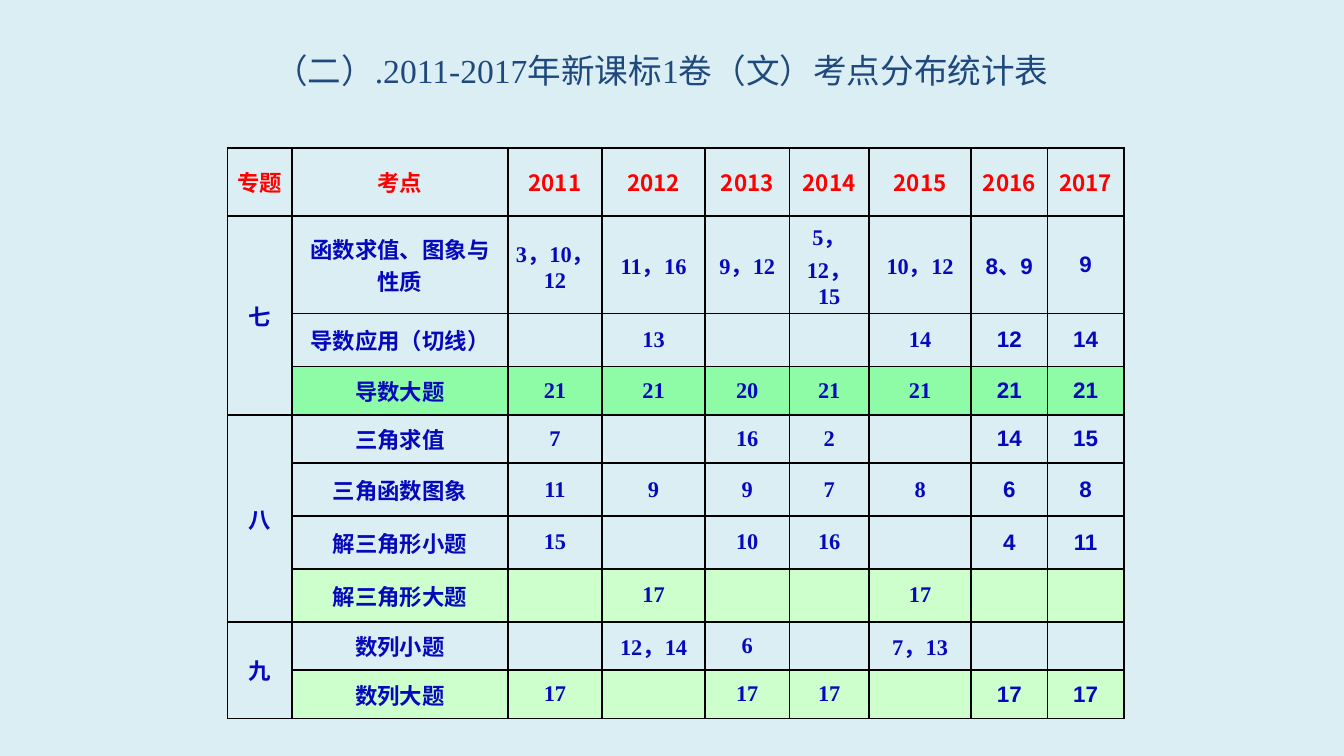
import itertools
from dataclasses import dataclass

import pptx
import pptx.dml.color
import pptx.enum.text
import pptx.oxml.ns
import pptx.util
from lxml import etree

COLORS = {
    "background": "DBEEF4",
    "title": "1F497D",
    "header": "FF0000",
    "body": "0509BB",
    "border": "000000",
    "strong": "8EFCA6",
    "soft": "CCFFCC",
}
CJK, SERIF, SANS = "Noto Sans CJK SC", "Times New Roman", "Arial"

COLUMN_SHARES = [4.8, 16.07, 7, 7.67, 6.27, 5.93, 7.6, 5.67, 5.7]
HEADER = ["专题", "考点", "2011", "2012", "2013", "2014", "2015", "2016", "2017"]
HEADER_SHARE = 8.97
LOW, MEDIUM, TALL = 6.4, 7, 12.9
FIRST_SANS_COLUMN = HEADER.index("2016")


@dataclass
class Topic:
    name: str
    questions: list[str]
    share: float
    fill: str = ""


@dataclass
class Section:
    name: str
    topics: list[Topic]


SECTIONS = [
    Section("七", [
        Topic("函数求值、图象与性质",
              ["3，10，12", "11，16", "9，12", "5，12，15", "10，12", "8、9", "9"], TALL),
        Topic("导数应用（切线）", ["", "13", "", "", "14", "12", "14"], MEDIUM),
        Topic("导数大题", ["21", "21", "20", "21", "21", "21", "21"], LOW, "strong"),
    ]),
    Section("八", [
        Topic("三角求值", ["7", "", "16", "2", "", "14", "15"], LOW),
        Topic("三角函数图象", ["11", "9", "9", "7", "8", "6", "8"], MEDIUM),
        Topic("解三角形小题", ["15", "", "10", "16", "", "4", "11"], MEDIUM),
        Topic("解三角形大题", ["", "17", "", "", "17", "", ""], MEDIUM, "soft"),
    ]),
    Section("九", [
        Topic("数列小题", ["", "12，14", "6", "", "7，13", "", ""], LOW),
        Topic("数列大题", ["17", "", "17", "17", "", "17", "17"], LOW, "soft"),
    ]),
]


def rgb(name: str) -> pptx.dml.color.RGBColor:
    return pptx.dml.color.RGBColor.from_string(COLORS[name])


def share(total: int, percent: float) -> int:
    return pptx.util.Emu(round(total * percent / 100))


def format_run(r, size: float, font: str, color: str, bold: bool) -> None:
    r.font.size = pptx.util.Pt(size)
    r.font.name = font
    r.font.bold = bold
    r.font.color.rgb = rgb(color)
    ea = etree.SubElement(r.font._element, pptx.oxml.ns.qn("a:ea"))
    ea.set("typeface", CJK)


def draw_borders(cell) -> None:
    qn = pptx.oxml.ns.qn
    tc_pr = cell._tc.get_or_add_tcPr()
    for i, side in enumerate(("a:lnL", "a:lnR", "a:lnT", "a:lnB")):
        ln = etree.Element(qn(side), w=str(pptx.util.Pt(1)))
        fill = etree.SubElement(ln, qn("a:solidFill"))
        etree.SubElement(fill, qn("a:srgbClr"), val=COLORS["border"])
        tc_pr.insert(i, ln)


def style_cell(cell, fill: str = "") -> None:
    cell.margin_left = cell.margin_right = pptx.util.Pt(4)
    cell.margin_top = cell.margin_bottom = pptx.util.Pt(2)
    cell.vertical_anchor = pptx.enum.text.MSO_ANCHOR.MIDDLE
    if fill:
        cell.fill.solid()
        cell.fill.fore_color.rgb = rgb(fill)
    else:
        cell.fill.background()
    draw_borders(cell)


def write_cell(cell, text: str, font: str, color: str) -> None:
    p = cell.text_frame.paragraphs[0]
    p.alignment = pptx.enum.text.PP_ALIGN.CENTER
    for is_comma, chars in itertools.groupby(text, lambda char: char == "，"):
        r = p.add_run()
        r.text = "".join(chars)
        format_run(r, 12, CJK if is_comma else font, color, True)
    if not text:
        etree.SubElement(p._p, pptx.oxml.ns.qn("a:endParaRPr"), sz="1200")


def question_font(column: int) -> str:
    return SANS if column >= FIRST_SANS_COLUMN else SERIF


def add_title(slide, text: str, width: int, height: int) -> None:
    sp = slide.shapes.title
    sp.left, sp.top = share(width, 18.1), share(height, 3.38)
    sp.width, sp.height = share(width, 63.8), share(height, 11.73)
    tf = sp.text_frame
    tf.text = text
    tf.word_wrap = True
    tf.auto_size = pptx.enum.text.MSO_AUTO_SIZE.NONE
    tf.vertical_anchor = pptx.enum.text.MSO_ANCHOR.MIDDLE
    tf.margin_right = pptx.util.Inches(0.26)
    p = tf.paragraphs[0]
    p.alignment = pptx.enum.text.PP_ALIGN.CENTER
    format_run(p.runs[0], 18, SERIF, "title", False)


def add_statistics(slide, width: int, height: int) -> None:
    topics = [topic for section in SECTIONS for topic in section.topics]
    row_shares = [HEADER_SHARE] + [topic.share for topic in topics]
    frame = slide.shapes.add_table(
        len(row_shares), len(HEADER), share(width, 16.93), share(height, 19.6),
        share(width, sum(COLUMN_SHARES)), share(height, sum(row_shares)))
    table = frame.table
    table.first_row = table.horz_banding = False
    for column, percent in zip(table.columns, COLUMN_SHARES):
        column.width = share(width, percent)
    for row, percent in zip(table.rows, row_shares):
        row.height = share(height, percent)

    for column, text in enumerate(HEADER):
        style_cell(table.cell(0, column))
        write_cell(table.cell(0, column), text, CJK, "header")

    for row, topic in enumerate(topics, 1):
        style_cell(table.cell(row, 0))
        for column, text in enumerate([topic.name] + topic.questions, 1):
            cell = table.cell(row, column)
            style_cell(cell, topic.fill)
            write_cell(cell, text, CJK if column == 1 else question_font(column), "body")

    row = 1
    for section in SECTIONS:
        last = row + len(section.topics) - 1
        table.cell(row, 0).merge(table.cell(last, 0))
        write_cell(table.cell(row, 0), section.name, CJK, "body")
        row = last + 1


def main() -> None:
    prs = pptx.Presentation()
    prs.slide_width = pptx.util.Inches(10)
    prs.slide_height = prs.slide_width * 9 // 16
    slide = prs.slides.add_slide(prs.slide_layouts[5])
    slide.background.fill.solid()
    slide.background.fill.fore_color.rgb = rgb("background")
    add_statistics(slide, prs.slide_width, prs.slide_height)
    add_title(slide, "（二）.2011-2017年新课标1卷（文）考点分布统计表",
              prs.slide_width, prs.slide_height)
    prs.save("out.pptx")


if __name__ == "__main__":
    main()
